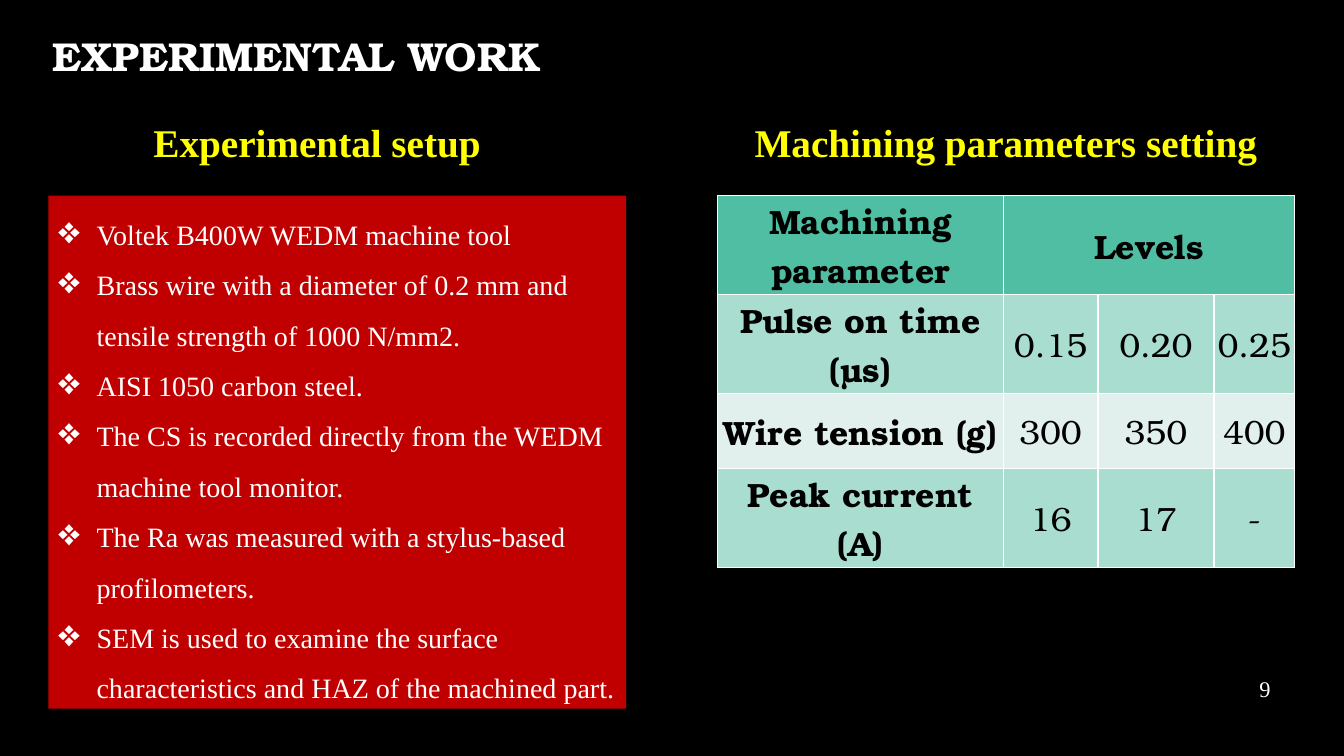
from dataclasses import dataclass

import lxml.etree
import pptx
import pptx.dml.color
import pptx.enum.shapes
import pptx.enum.text
import pptx.oxml
import pptx.oxml.ns
import pptx.util

Inches = pptx.util.Inches
Pt = pptx.util.Pt
RGBColor = pptx.dml.color.RGBColor
Align = pptx.enum.text.PP_ALIGN
Anchor = pptx.enum.text.MSO_ANCHOR
qn = pptx.oxml.ns.qn

BLACK = RGBColor(0x00, 0x00, 0x00)
WHITE = RGBColor(0xFF, 0xFF, 0xFF)
YELLOW = RGBColor(0xFF, 0xFF, 0x00)
RED = RGBColor(0xC0, 0x00, 0x00)
GREEN = RGBColor(0x50, 0xBE, 0xA3)
LIGHT_GREEN = RGBColor(0xA8, 0xDD, 0xCF)
PALE_GREEN = RGBColor(0xE1, 0xF0, 0xED)

BOOKMAN = "TeX Gyre Bonum"
TIMES = "Times New Roman"


@dataclass
class Label:
    text: str
    left: float
    top: float
    width: float
    height: float
    size: float
    font: str = TIMES
    color: RGBColor = WHITE
    bold: bool = True
    align: Align = Align.CENTER
    spacing: float = 1.0


@dataclass
class ParameterRow:
    name: str
    levels: tuple[str, ...]
    fill: RGBColor
    height: float


LABELS = [
    Label("EXPERIMENTAL WORK", 0.42, 0.29, 5.52, 0.58, 28.8, font=BOOKMAN,
          align=Align.LEFT, spacing=0.9),
    Label("Experimental setup", 0.42, 1.12, 5.45, 0.57, 28, color=YELLOW),
    Label("Machining parameters setting", 7.25, 1.12, 5.45, 0.57, 28, color=YELLOW),
    Label("9", 11.88, 6.63, 0.82, 0.4, 16, bold=False, align=Align.RIGHT),
]

SETUP_POINTS = [
    "Voltek B400W WEDM machine tool",
    "Brass wire with a diameter of 0.2 mm and tensile strength of 1000 N/mm2.",
    "AISI 1050 carbon steel.",
    "The CS is recorded directly from the WEDM machine tool monitor.",
    "The Ra was measured with a stylus-based profilometers.",
    "SEM is used to examine the surface characteristics and HAZ of the machined part.",
]

# Rows whose name wraps onto two lines are taller
ONE_LINE, TWO_LINES = 0.75, 0.98
PARAMETER_ROWS = [
    ParameterRow("Machining parameter", ("Levels", "", ""), GREEN, TWO_LINES),
    ParameterRow("Pulse on time (µs)", ("0.15", "0.20", "0.25"), LIGHT_GREEN, TWO_LINES),
    ParameterRow("Wire tension (g)", ("300", "350", "400"), PALE_GREEN, ONE_LINE),
    ParameterRow("Peak current (A)", ("16", "17", "-"), LIGHT_GREEN, TWO_LINES),
]
COLUMN_WIDTHS = (2.83, 0.94, 1.15, 0.8)


def write(paragraph, text: str, *, size: float, font: str = TIMES,
          color: RGBColor = WHITE, bold: bool = False,
          align: Align = Align.LEFT, spacing: float = 1.0) -> None:
    paragraph.alignment = align
    paragraph.line_spacing = spacing
    run = paragraph.add_run()
    run.text = text
    run.font.size = Pt(size)
    run.font.name = font
    run.font.bold = bold
    run.font.color.rgb = color


def add_label(slide, label: Label) -> None:
    box = slide.shapes.add_textbox(Inches(label.left), Inches(label.top),
                                   Inches(label.width), Inches(label.height))
    frame = box.text_frame
    frame.word_wrap = True
    frame.vertical_anchor = Anchor.MIDDLE
    write(frame.paragraphs[0], label.text, size=label.size, font=label.font,
          color=label.color, bold=label.bold, align=label.align, spacing=label.spacing)


def add_bullet(paragraph, symbol: str, indent: float, percent: int) -> None:
    properties = paragraph._p.get_or_add_pPr()
    properties.set("marL", str(Inches(indent)))
    properties.set("indent", str(-Inches(indent)))
    lxml.etree.SubElement(properties, qn("a:buSzPct")).set("val", str(percent * 1000))
    lxml.etree.SubElement(properties, qn("a:buChar")).set("char", symbol)


def add_setup_panel(slide) -> None:
    panel = slide.shapes.add_shape(pptx.enum.shapes.MSO_SHAPE.RECTANGLE,
                                   Inches(0.48), Inches(1.94), Inches(5.73), Inches(5.09))
    panel.shadow.inherit = False
    panel.fill.solid()
    panel.fill.fore_color.rgb = RED
    panel.line.fill.background()
    frame = panel.text_frame
    frame.word_wrap = True
    frame.vertical_anchor = Anchor.TOP
    for index, point in enumerate(SETUP_POINTS):
        paragraph = frame.add_paragraph() if index else frame.paragraphs[0]
        write(paragraph, point, size=20, spacing=1.5)
        add_bullet(paragraph, "❖", 0.38, 135)


def set_borders(cell, color: RGBColor, width: float) -> None:
    properties = cell._tc.get_or_add_tcPr()
    for position, side in enumerate(("a:lnL", "a:lnR", "a:lnT", "a:lnB")):
        line = pptx.oxml.parse_xml(
            f'<{side} xmlns:a="http://schemas.openxmlformats.org/drawingml/2006/main" '
            f'w="{Pt(width)}"><a:solidFill><a:srgbClr val="{color}"/></a:solidFill></{side}>')
        properties.insert(position, line)


def add_parameter_table(slide) -> None:
    table = slide.shapes.add_table(
        len(PARAMETER_ROWS), len(COLUMN_WIDTHS), Inches(7.12), Inches(1.94),
        Inches(sum(COLUMN_WIDTHS)), Inches(sum(row.height for row in PARAMETER_ROWS))).table
    for column, width in zip(table.columns, COLUMN_WIDTHS):
        column.width = Inches(width)
    for r, row in enumerate(PARAMETER_ROWS):
        table.rows[r].height = Inches(row.height)
        for c, text in enumerate((row.name, *row.levels)):
            cell = table.cell(r, c)
            cell.margin_left = cell.margin_right = Inches(0.02)
            cell.margin_top = cell.margin_bottom = 0
            cell.vertical_anchor = Anchor.MIDDLE
            cell.fill.solid()
            cell.fill.fore_color.rgb = row.fill
            set_borders(cell, WHITE, 1)
            if text:
                write(cell.text_frame.paragraphs[0], text, size=24, font=BOOKMAN,
                      color=BLACK, bold=r == 0 or c == 0, align=Align.CENTER)
    # The "Levels" heading spans the three level columns
    table.cell(0, 1).merge(table.cell(0, 3))


def main() -> None:
    deck = pptx.Presentation()
    deck.slide_width = Inches(13.33)
    deck.slide_height = Inches(7.5)
    slide = deck.slides.add_slide(deck.slide_layouts[6])
    slide.background.fill.solid()
    slide.background.fill.fore_color.rgb = BLACK

    # Title, headings and page number
    for label in LABELS:
        add_label(slide, label)

    # Left and right columns
    add_setup_panel(slide)
    add_parameter_table(slide)

    deck.save("out.pptx")


if __name__ == "__main__":
    main()
